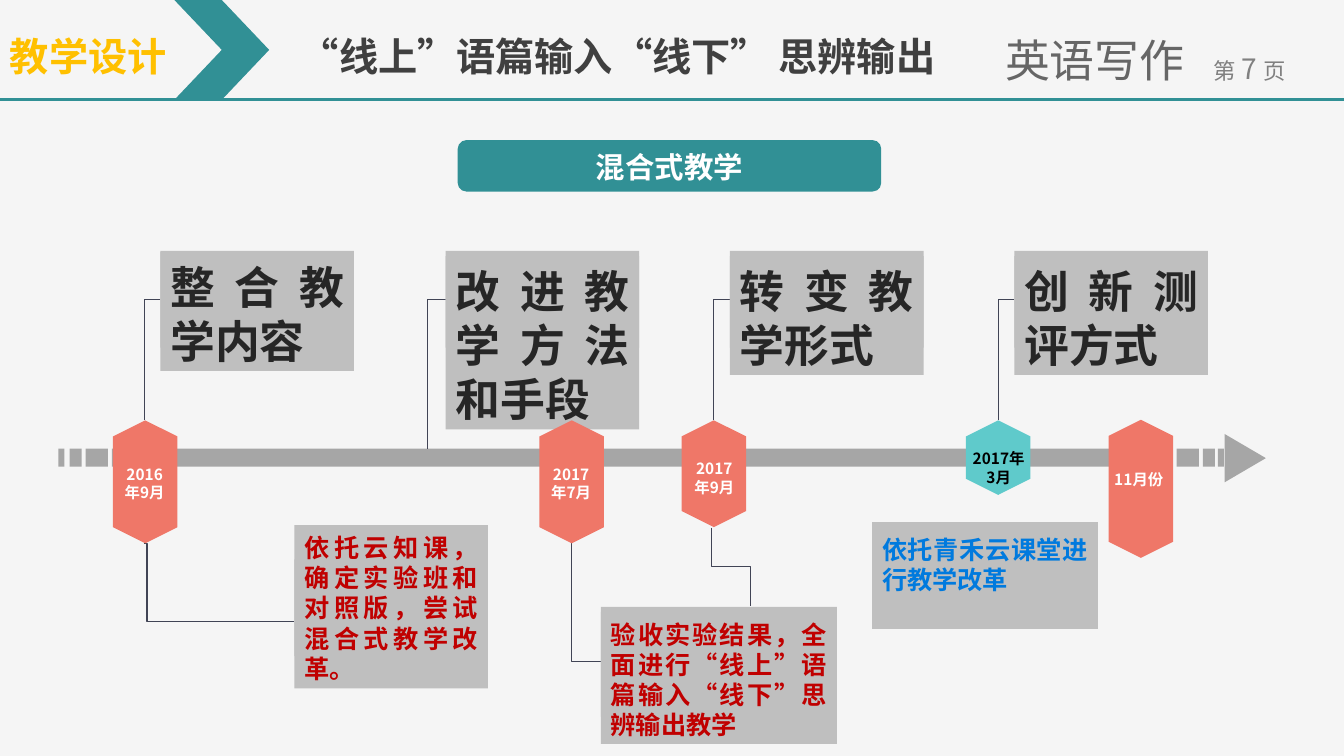
"""Build the blended-teaching timeline slide."""
import dataclasses

import pptx
import pptx.dml.color
import pptx.enum.shapes
import pptx.enum.text
import pptx.oxml
import pptx.oxml.ns
import pptx.util

SHAPE = pptx.enum.shapes.MSO_SHAPE
CONNECTOR = pptx.enum.shapes.MSO_CONNECTOR
ALIGN = pptx.enum.text.PP_ALIGN
ANCHOR = pptx.enum.text.MSO_ANCHOR
PX = 9144


@dataclasses.dataclass(frozen=True)
class Theme:
    background: str = "F5F5F5"
    teal: str = "319095"
    aqua: str = "5FCACB"
    coral: str = "EF7768"
    axis: str = "A6A6A6"
    card: str = "BFBFBF"
    wire: str = "414455"
    gold: str = "FFC000"
    white: str = "FFFFFF"
    black: str = "000000"
    heading: str = "404040"
    topic: str = "262626"
    course: str = "666666"
    page: str = "808080"
    red: str = "C00000"
    blue: str = "007ADE"
    font: str = "Noto Sans CJK SC"
    course_font: str = "Roboto"
    topic_size: int = 32
    heading_size: int = 28
    banner_size: int = 21
    detail_size: int = 18
    date_size: int = 11
    page_sizes: tuple = (16, 18, 20)
    leading: float = 1.2


class Timeline:
    def __init__(self, slide, theme):
        self.slide, self.theme = slide, theme
        slide.background.fill.solid()
        slide.background.fill.fore_color.rgb = self.rgb(theme.background)

    def rgb(self, color):
        return pptx.dml.color.RGBColor.from_string(color)

    def block(self, kind, box, color, rotation=0):
        block = self.slide.shapes.add_shape(kind, *(v * PX for v in box))
        block.shadow.inherit = False
        block.fill.solid()
        block.fill.fore_color.rgb = self.rgb(color)
        block.line.fill.background()
        block.rotation = rotation
        return block

    def add_words(self, holder, runs, color, align=ALIGN.CENTER, bold=True,
                  wrap=True, anchor=ANCHOR.TOP, font=None):
        frame = holder.text_frame
        frame.word_wrap = wrap
        frame.vertical_anchor = anchor
        largest = max(size for _, size in runs)
        frame.margin_left = frame.margin_right = 10 * PX
        frame.margin_top = (5 + round(largest / 10)) * PX
        frame.margin_bottom = 5 * PX
        paragraph = frame.paragraphs[0]
        paragraph.alignment = align
        paragraph.line_spacing = pptx.util.Pt(round(largest * self.theme.leading, 1))
        for words, size in runs:
            run = paragraph.add_run()
            run.text = words
            run.font.size = pptx.util.Pt(size)
            run.font.bold = bold
            run.font.color.rgb = self.rgb(color)
            run.font.name = font or self.theme.font
            properties = run._r.get_or_add_rPr()
            properties.set("lang", "zh-CN")
            east_asian = pptx.oxml.parse_xml(
                '<a:ea %s typeface="%s"/>' % (pptx.oxml.ns.nsdecls("a"), run.font.name))
            properties.find(pptx.oxml.ns.qn("a:latin")).addnext(east_asian)

    def label(self, box, runs, color, **style):
        label = self.slide.shapes.add_textbox(*(v * PX for v in box))
        self.add_words(label, runs, color, **style)

    def card(self, backing, face, words, size, color):
        self.block(SHAPE.RECTANGLE, backing, self.theme.card)
        self.add_words(self.block(SHAPE.RECTANGLE, face, self.theme.card),
                       [(words, size)], color, align=ALIGN.JUSTIFY)

    def date(self, center, length, fill, words, box, color):
        hexagon = (center - length // 2, 417 + length // 2 - 32, length, 64)
        self.block(SHAPE.HEXAGON, hexagon, fill, rotation=90)
        self.label(box, [(words, self.theme.date_size)], color)

    def wire(self, ends, color, width, kind=CONNECTOR.ELBOW):
        wire = self.slide.shapes.add_connector(kind, *(v * PX for v in ends))
        wire.line.color.rgb = self.rgb(color)
        wire.line.width = pptx.util.Pt(width)
        wire._element.spPr.append(pptx.oxml.parse_xml(
            "<a:effectLst %s/>" % pptx.oxml.ns.nsdecls("a")))
        return wire

    def elbow(self, ends, bends=2, turn=None, rotation=0):
        wire = self.wire(ends, self.theme.wire, 0.75)
        geometry = wire._element.spPr.find(pptx.oxml.ns.qn("a:prstGeom"))
        geometry.set("prst", "bentConnector%d" % bends)
        if turn is not None:
            guides = geometry.find(pptx.oxml.ns.qn("a:avLst"))
            guides.append(pptx.oxml.parse_xml(
                '<a:gd %s name="adj1" fmla="val %d"/>' % (pptx.oxml.ns.nsdecls("a"), turn)))
        if rotation:
            wire._element.spPr.find(pptx.oxml.ns.qn("a:xfrm")).set("rot", str(rotation * 60000))


def main():
    deck = pptx.Presentation()
    deck.slide_width, deck.slide_height = 1333 * PX, 750 * PX
    theme = Theme()
    page = Timeline(deck.slides.add_slide(deck.slide_layouts[6]), theme)

    small, middle, large = theme.page_sizes
    page.label((1181, 44, 117, 44),
               [("第", small), (" ", middle), ("7", large), (" ", middle), ("页", small)],
               theme.page, bold=False, wrap=False)

    for left, width in ((58, 6), (69, 12), (85, 22), (111, 1051),
                        (1167, 22), (1193, 12), (1208, 6)):
        page.block(SHAPE.RECTANGLE, (left, 445, width, 18), theme.axis)
    page.block(SHAPE.ISOSCELES_TRIANGLE, (1211, 434, 48, 41), theme.axis, rotation=90)

    topics = (
        ("整合教学内容", 159, 250, 118, 143, 417),
        ("改进教学方法和手段", 442, 254, 172, 424, 445),
        ("转变教学形式", 724, 254, 118, 708, 417),
        ("创新测评方式", 1006, 254, 118, 990, 417),
    )
    for words, left, top, height, stem, foot in topics:
        page.elbow((left, 297, stem, foot))
        page.card((left, 249, 192, 96), (left, top, 192, height),
                  words, theme.topic_size, theme.topic)

    page.elbow((143, 539, 292, 617), bends=3, turn=1900)
    page.elbow((596, 656, 567, 539))
    page.elbow((764, 543, 686, 582), bends=3, turn=50000, rotation=270)

    dates = (
        (144, 122, theme.coral, "2016年9月", (112, 455, 63, 47), theme.white),
        (567, 122, theme.coral, "2017年7月", (535, 455, 63, 47), theme.white),
        (708, 106, theme.coral, "2017年9月", (677, 450, 63, 47), theme.white),
        (990, 74, theme.aqua, "2017年3月", (951, 440, 79, 47), theme.black),
        (1131, 137, theme.coral, "11月份", (1092, 460, 75, 29), theme.white),
    )
    for date in dates:
        page.date(*date)

    details = (
        ((292, 555, 192, 96), (292, 521, 192, 162),
         "依托云知课，确定实验班和对照版，尝试混合式教学改革。", theme.red),
        ((596, 602, 234, 109), (596, 607, 234, 131),
         "验收实验结果，全面进行“线上”语篇输入“线下”思辨输出教学", theme.red),
        ((865, 518, 224, 96), (865, 523, 224, 101),
         "依托青禾云课堂进行教学改革", theme.blue),
    )
    for backing, face, words, color in details:
        page.card(backing, face, words, theme.detail_size, color)

    banner = page.block(SHAPE.ROUNDED_RECTANGLE, (454, 139, 420, 51), theme.teal)
    page.add_words(banner, [("混合式教学", theme.banner_size)], theme.white,
                   anchor=ANCHOR.MIDDLE)

    page.wire((0, 99, 1333, 99), theme.teal, 2.25, CONNECTOR.STRAIGHT)
    page.label((198, 24, 829, 57),
               [("“线上”语篇输入“线下” 思辨输出", theme.heading_size)], theme.heading)
    page.block(SHAPE.CHEVRON, (173, 0, 94, 99), theme.teal)
    page.label((0, 24, 446, 57), [("教学设计", theme.heading_size)], theme.gold, align=ALIGN.LEFT)
    page.label((987, 24, 200, 64), [("英语写作", theme.topic_size)], theme.course,
               align=ALIGN.LEFT, bold=False, wrap=False, font=theme.course_font)

    deck.save("out.pptx")


if __name__ == "__main__":
    main()
